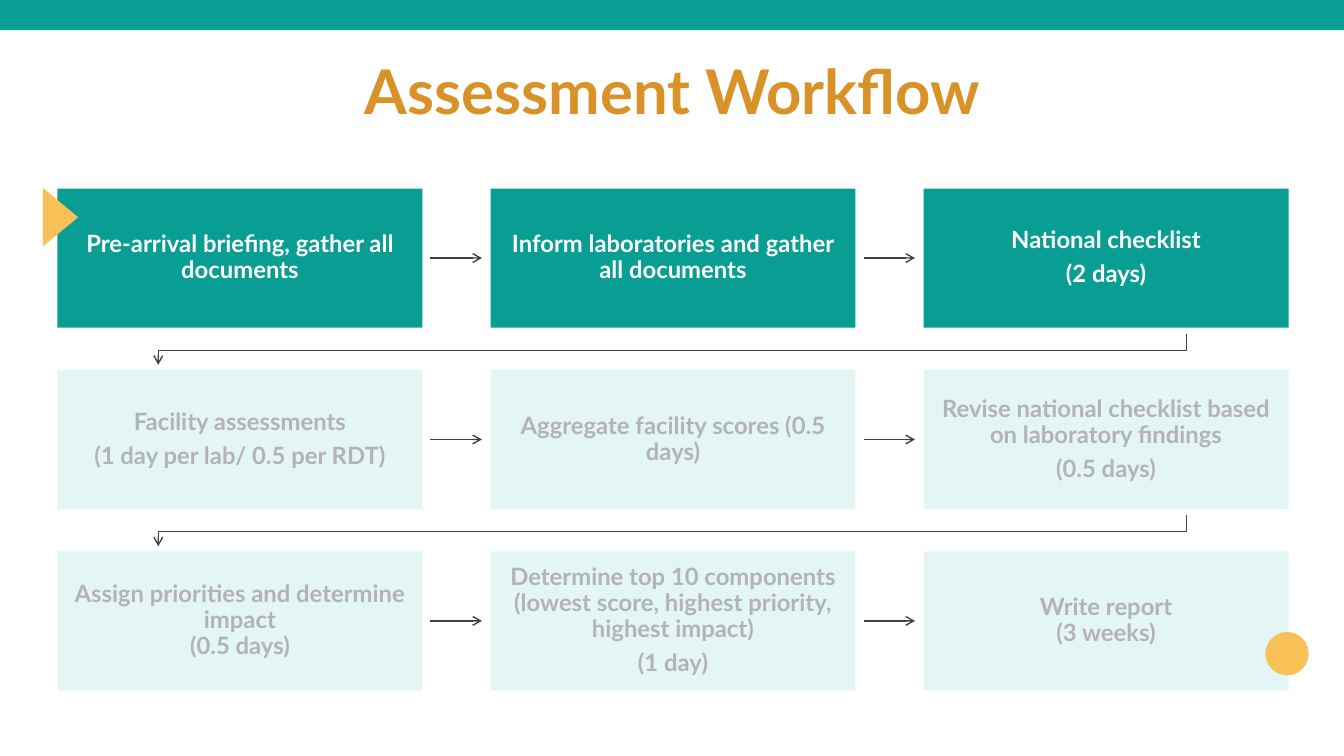
"""Builds the Assessment Workflow slide: a three by three grid of steps joined by arrows."""
import pptx
import pptx.dml.color
import pptx.enum.shapes
import pptx.enum.text
import pptx.util
from lxml import etree

Inches, Pt = pptx.util.Inches, pptx.util.Pt
SHAPE = pptx.enum.shapes.MSO_SHAPE
TEAL, PALE, YELLOW, DARK = "099E93", "E4F5F5", "F8C056", "414141"
LEFT, TOP, BOX_W, BOX_H = 0.57, 1.87, 3.62, 1.38
COL_STEP, ROW_STEP = 4.295, 1.8
STEPS = [
    [["Pre-arrival briefing, gather all documents"],
     ["Inform laboratories and gather all documents"],
     ["National checklist", "(2 days)"]],
    [["Facility assessments", "(1 day per lab/ 0.5 per RDT)"],
     ["Aggregate facility scores (0.5 days)"],
     ["Revise national checklist based on laboratory findings", "(0.5 days)"]],
    [["Assign priorities and determine impact\n(0.5 days)"],
     ["Determine top 10 components (lowest score, highest priority, highest impact)", "(1 day)"],
     ["Write report\n(3 weeks)"]],
]

prs = pptx.Presentation()
prs.slide_width, prs.slide_height = Inches(13.33), Inches(7.5)
s = prs.slides.add_slide(prs.slide_layouts[6])


def rgb(color):
    return pptx.dml.color.RGBColor.from_string(color)


def write(sp, paragraphs, size=17, color="FFFFFF", inset=0.12):
    """Fill a shape with centred bold paragraphs."""
    tf = sp.text_frame
    tf.word_wrap = True
    tf.vertical_anchor = pptx.enum.text.MSO_ANCHOR.MIDDLE
    tf.margin_left = tf.margin_right = tf.margin_top = tf.margin_bottom = Inches(inset)
    for i, text in enumerate(paragraphs):
        p = tf.add_paragraph() if i else tf.paragraphs[0]
        p.text = text
        p.alignment = pptx.enum.text.PP_ALIGN.CENTER
        p.line_spacing = 0.9
        p.space_before = Pt(6 if i else 0)
        for r in p.runs:
            r.font.name, r.font.size, r.font.bold = "Lato", Pt(size), True
            r.font.color.rgb = rgb(color)


title = s.shapes.add_textbox(Inches(0.92), Inches(0.21), Inches(11.5), Inches(1.45))
write(title, ["Assessment Workflow"], size=44, color="D99228")

plain = [(SHAPE.RECTANGLE, 0, 0, 13.33, 0.3, 0, TEAL, None, None)]
for row, steps in enumerate(STEPS):
    fill, color = (PALE, "B3B3B3") if row else (TEAL, "FFFFFF")
    for col, step in enumerate(steps):
        plain.append((SHAPE.RECTANGLE, LEFT + col * COL_STEP, TOP + row * ROW_STEP,
                      BOX_W, BOX_H, 0, fill, step, color))
plain.append((SHAPE.ISOSCELES_TRIANGLE, 0.31, 1.98, 0.58, 0.35, 90, YELLOW, None, None))
plain.append((SHAPE.OVAL, 12.55, 6.27, 0.43, 0.43, 0, YELLOW, None, None))
for kind, x, y, w, h, turn, fill, step, color in plain:
    sp = s.shapes.add_shape(kind, Inches(x), Inches(y), Inches(w), Inches(h))
    sp.shadow.inherit = False
    sp.rotation = turn
    sp.fill.solid()
    sp.fill.fore_color.rgb = rgb(fill)
    sp.line.fill.background()
    if step:
        write(sp, step, color=color)

arrows = []
for row in range(3):
    y = Inches(TOP + row * ROW_STEP + BOX_H / 2)
    for col in range(2):
        x = LEFT + col * COL_STEP + BOX_W + 0.08
        arrows.append(s.shapes.add_connector(
            pptx.enum.shapes.MSO_CONNECTOR.STRAIGHT, Inches(x), y, Inches(x + 0.51), y))
for row in range(2):
    y = TOP + row * ROW_STEP + BOX_H + 0.06
    fb = s.shapes.build_freeform(Inches(11.77), Inches(y))
    bends = [(11.77, y + 0.165), (1.57, y + 0.165), (1.57, y + 0.31)]
    fb.add_line_segments([(Inches(a), Inches(b)) for a, b in bends], close=False)
    sp = fb.convert_to_shape()
    sp.fill.background()
    arrows.append(sp)
for sp in arrows:
    sp.line.color.rgb = rgb(DARK)
    sp.line.width = Pt(1)
    ln = sp.line._get_or_add_ln()
    etree.SubElement(ln, pptx.oxml.ns.qn("a:tailEnd"), type="arrow")
    etree.SubElement(ln.getparent(), pptx.oxml.ns.qn("a:effectLst"))

prs.save("out.pptx")
